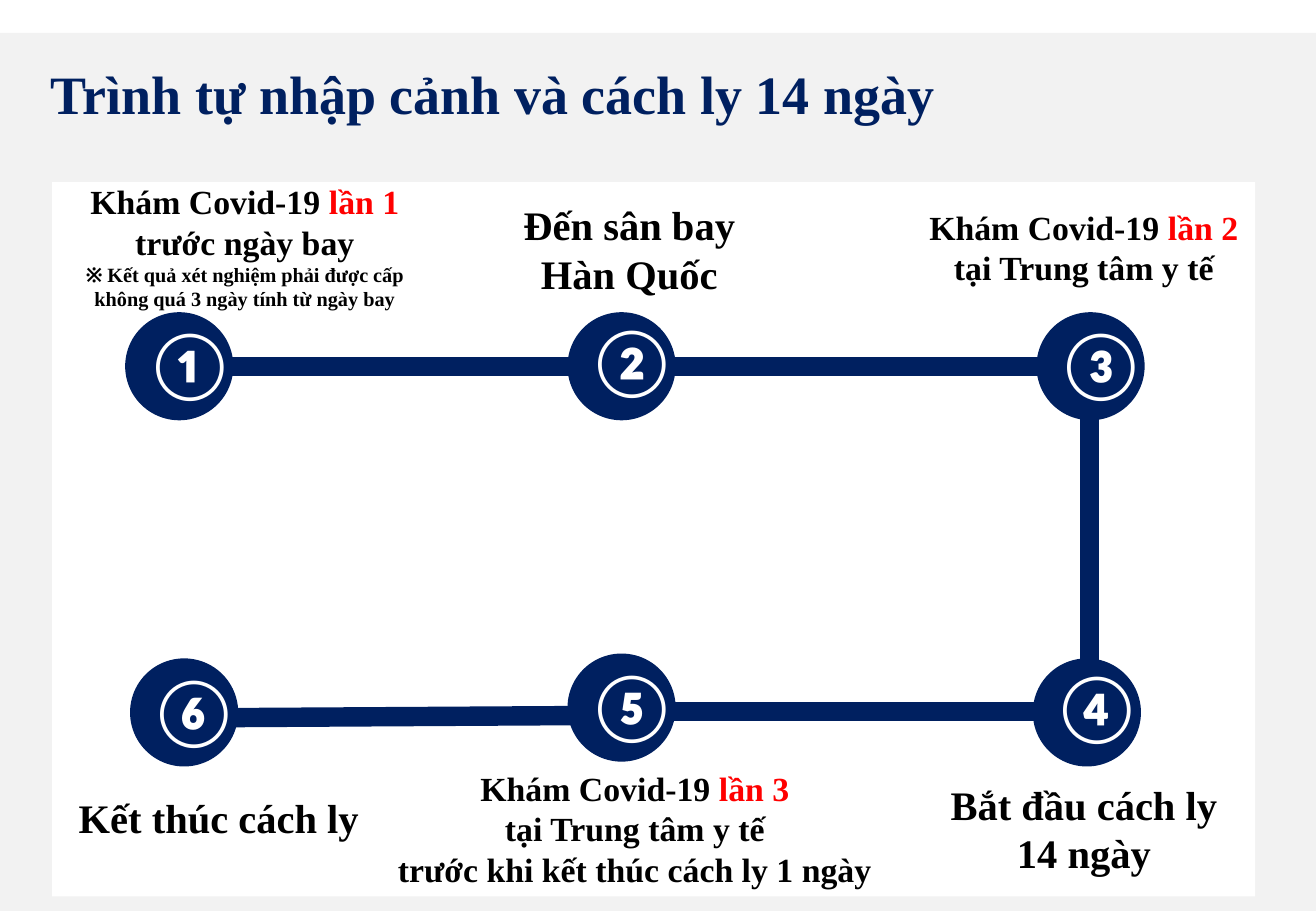
import dataclasses

import lxml.etree
import pptx
import pptx.dml.color
import pptx.enum.shapes
import pptx.enum.text
import pptx.oxml.ns
import pptx.util

SLIDE_WIDTH = pptx.util.Inches(10.83)
SLIDE_HEIGHT = pptx.util.Inches(7.5)
NAVY, RED, BLACK, WHITE, GREY = "002060", "FF0000", "000000", "FFFFFF", "F2F2F2"
SERIF, SANS = "Times New Roman", "Calibri"
DISC = 8.22  # share of the slide's width
NUMERAL_WIDTH, NUMERAL_HEIGHT = 7.02, 10.27
LEFT = pptx.enum.text.PP_ALIGN.LEFT
CENTER = pptx.enum.text.PP_ALIGN.CENTER
RECTANGLE = pptx.enum.shapes.MSO_SHAPE.RECTANGLE
OVAL = pptx.enum.shapes.MSO_SHAPE.OVAL
STRAIGHT = pptx.enum.shapes.MSO_CONNECTOR.STRAIGHT
ELBOW = pptx.enum.shapes.MSO_CONNECTOR.ELBOW


@dataclasses.dataclass(frozen=True)
class Area:
    """Left and width in percent of slide width, top and height of slide height."""
    left: float
    top: float
    width: float
    height: float


@dataclasses.dataclass(frozen=True)
class Run:
    text: str
    size: float = 20
    color: str = BLACK
    font: str = SERIF


@dataclasses.dataclass(frozen=True)
class Line:
    runs: tuple[Run, ...]
    align: pptx.enum.text.PP_ALIGN = CENTER


@dataclasses.dataclass(frozen=True)
class Step:
    numeral: str
    center_x: float
    center_y: float
    numeral_lift: float
    caption_area: Area
    caption: tuple[Line, ...]
    wrap: bool = False


def across(percent: float) -> int:
    return round(SLIDE_WIDTH * percent / 100)


def down(percent: float) -> int:
    return round(SLIDE_HEIGHT * percent / 100)


def rgb(color: str) -> pptx.dml.color.RGBColor:
    return pptx.dml.color.RGBColor.from_string(color)


def bounds(area: Area) -> tuple[int, int, int, int]:
    return across(area.left), down(area.top), across(area.width), down(area.height)


def add_filled(slide, kind, area: Area, color: str) -> None:
    shape = slide.shapes.add_shape(kind, *bounds(area))
    shape.shadow.inherit = False
    shape.fill.solid()
    shape.fill.fore_color.rgb = rgb(color)
    shape.line.fill.background()


def add_text(slide, area: Area, lines: tuple[Line, ...], wrap: bool = False) -> None:
    frame = slide.shapes.add_textbox(*bounds(area)).text_frame
    frame.word_wrap = wrap
    frame.auto_size = pptx.enum.text.MSO_AUTO_SIZE.SHAPE_TO_FIT_TEXT
    for index, line in enumerate(lines):
        paragraph = frame.add_paragraph() if index else frame.paragraphs[0]
        paragraph.alignment = line.align
        for part in line.runs:
            run = paragraph.add_run()
            run.text = part.text
            run.font.size = pptx.util.Pt(part.size)
            run.font.name = part.font
            run.font.bold = True
            run.font.color.rgb = rgb(part.color)


def add_route(slide, kind, start: tuple[float, float], end: tuple[float, float],
              weight: float, bend: float | None = None) -> None:
    """Draw a route; bend is where an elbow turns, in percent of its width."""
    route = slide.shapes.add_connector(
        kind, across(start[0]), down(start[1]), across(end[0]), down(end[1]))
    route.line.color.rgb = rgb(NAVY)
    route.line.width = pptx.util.Pt(weight)
    qn = pptx.oxml.ns.qn
    properties = route._element.spPr
    lxml.etree.SubElement(properties, qn("a:effectLst"))
    if bend is not None:
        adjustments = properties.find(qn("a:prstGeom")).find(qn("a:avLst"))
        guide = lxml.etree.SubElement(adjustments, qn("a:gd"))
        guide.set("name", "adj1")
        guide.set("fmla", f"val {round(bend * 1000)}")


def add_step(slide, step: Step) -> None:
    disc_height = DISC * SLIDE_WIDTH / SLIDE_HEIGHT
    add_filled(slide, OVAL, Area(step.center_x - DISC / 2, step.center_y - disc_height / 2,
                                 DISC, disc_height), NAVY)
    numeral_area = Area(step.center_x - NUMERAL_WIDTH / 2,
                        step.center_y - NUMERAL_HEIGHT / 2 - step.numeral_lift,
                        NUMERAL_WIDTH, NUMERAL_HEIGHT)
    add_text(slide, numeral_area, (Line((Run(step.numeral, 40, WHITE, SANS),), LEFT),))
    add_text(slide, step.caption_area, step.caption, step.wrap)


def plain(text: str, size: float = 20, align: pptx.enum.text.PP_ALIGN = CENTER) -> Line:
    return Line((Run(text, size),), align)


def covid_test(round_label: str) -> Line:
    return Line((Run("Khám Covid-19 "), Run(round_label, color=RED)))


STEPS = (
    Step("①", 13.62, 40.2, 0.53, Area(0.74, 19.2, 35.73, 15.73), (
        covid_test("lần 1"),
        plain("trước ngày bay"),
        Line((Run("※ ", 12, font=SANS), Run("Kết quả xét nghiệm phải được cấp", 12))),
        plain("không quá 3 ngày tính từ ngày bay", 12)), wrap=True),
    Step("②", 47.23, 40.2, 0.8, Area(38.87, 21.33, 18.93, 12.13), (
        plain("Đến sân bay", 24, LEFT), plain("Hàn Quốc", 24))),
    Step("③", 82.87, 40.2, 0.53, Area(69.62, 22, 25.48, 10.27), (
        covid_test("lần 2"), plain("tại Trung tâm y tế"))),
    Step("④", 82.59, 78.2, 0.8, Area(70.82, 84.93, 23.08, 12.13), (
        plain("Bắt đầu cách ly", 24), plain("14 ngày", 24))),
    Step("⑤", 47.23, 77.67, 0.4, Area(29.18, 83.6, 38.13, 14.8), (
        covid_test("lần 3"),
        plain("tại Trung tâm y tế"),
        plain("trước khi kết thúc cách ly 1 ngày"))),
    Step("⑥", 13.99, 78.2, 0.4, Area(5.08, 86.4, 23.36, 6.67), (
        plain("Kết thúc cách ly", 24, LEFT),)),
)


def main() -> None:
    deck = pptx.Presentation()
    deck.slide_width, deck.slide_height = SLIDE_WIDTH, SLIDE_HEIGHT
    slide = deck.slides.add_slide(deck.slide_layouts[6])
    add_filled(slide, RECTANGLE, Area(0, 3.6, 100, 96.4), GREY)
    add_filled(slide, RECTANGLE, Area(3.97, 20, 91.41, 78.4), WHITE)
    add_text(slide, Area(2.95, 6, 69.62, 8.53),
             (Line((Run("Trình tự nhập cảnh và cách ly 14 ngày", 32, NAVY),), LEFT),))
    add_route(slide, STRAIGHT, (46.54, 78.53), (14.68, 78.8), 11.5)
    add_route(slide, ELBOW, (12.83, 40.27), (48.29, 78.13), 11.25, bend=197.4)
    for step in STEPS:
        add_step(slide, step)
    deck.save("out.pptx")


if __name__ == "__main__":
    main()
